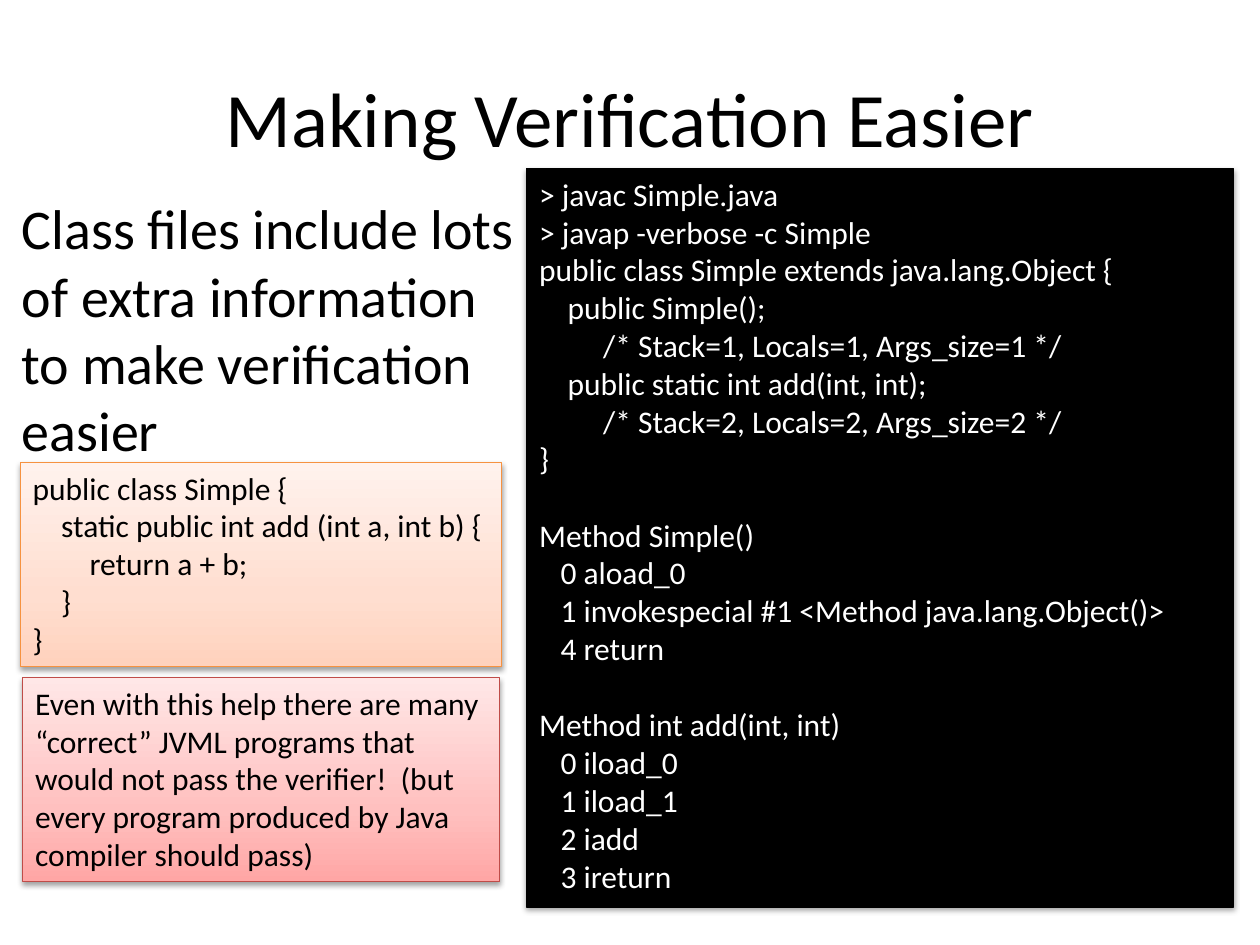
import copy

import lxml.etree
import pptx
import pptx.dml.color
import pptx.enum.shapes
import pptx.enum.text
import pptx.oxml
import pptx.oxml.ns
import pptx.util

COLOURS = {
    "text": "000000",
    "terminal": "000000",
    "terminal_text": "FFFFFF",
    "code_line": "F69240",
    "note_line": "BF4C48",
    "shadow": "000000",
}
GRADIENTS = {
    "code": [(0, "FFD2BD"), (0.35, "FFDED0"), (1, "FFF2ED")],
    "note": [(0, "FFA6A5"), (0.35, "FFC0BF"), (1, "FFE7E7")],
}
SPACE = 4.07
LINE = 22

SOURCE_CODE = [
    (0, "public class Simple {"),
    (4, "static public int add (int a, int b) {"),
    (8, "return a + b;"),
    (4, "}"),
    (0, "}"),
]
TERMINAL_BLOCKS = [
    [
        (0, "> javac Simple.java"),
        (0, "> javap -verbose -c Simple"),
        (0, "public class Simple extends java.lang.Object {"),
        (4, "public Simple();"),
        (9, "/* Stack=1, Locals=1, Args_size=1 */"),
        (4, "public static int add(int, int);"),
        (9, "/* Stack=2, Locals=2, Args_size=2 */"),
        (0, "}"),
    ],
    [
        (0, "Method Simple()"),
        (3, "0 aload_0"),
        (3, "1 invokespecial #1 <Method java.lang.Object()>"),
        (3, "4 return"),
    ],
    [
        (0, "Method int add(int, int)"),
        (3, "0 iload_0"),
        (3, "1 iload_1"),
        (3, "2 iadd"),
        (3, "3 ireturn"),
    ],
]
NOTE = (
    "Even with this help there are many “correct” JVML programs that would not "
    "pass the verifier!  (but every program produced by Java compiler should pass)"
)


def rgb(value):
    return pptx.dml.color.RGBColor.from_string(value)


class SlideBuilder:
    font = "Calibri"

    def __init__(self, slide):
        self.slide = slide

    def fill_text(self, frame, blocks, size, colour, align="LEFT", anchor="TOP"):
        frame.word_wrap = True
        frame.vertical_anchor = pptx.enum.text.MSO_ANCHOR[anchor]
        paragraph = None
        for block in blocks:
            for number, (indent, text) in enumerate(block):
                first = paragraph is None
                paragraph = frame.paragraphs[0] if first else frame.add_paragraph()
                paragraph.text = text
                paragraph.alignment = pptx.enum.text.PP_ALIGN[align]
                paragraph.font.name = self.font
                paragraph.font.size = pptx.util.Pt(size)
                paragraph.font.color.rgb = rgb(COLOURS[colour])
                if number == 0 and not first:
                    paragraph.space_before = pptx.util.Pt(LINE)
                if indent:
                    margin = pptx.util.Pt(indent * SPACE)
                    paragraph._p.get_or_add_pPr().set("marL", str(int(margin)))

    def text(self, box, text, size, indent=0, **style):
        shape = self.slide.shapes.add_textbox(*map(pptx.util.Pt, box))
        self.fill_text(shape.text_frame, [[(indent, text)]], size, "text", **style)

    def panel(self, box, blocks, line, colour="text", fill=None, gradient=None):
        shape = self.slide.shapes.add_shape(
            pptx.enum.shapes.MSO_SHAPE.RECTANGLE, *map(pptx.util.Pt, box)
        )
        if gradient:
            self.shade(shape, GRADIENTS[gradient])
        else:
            shape.fill.solid()
            shape.fill.fore_color.rgb = rgb(COLOURS[fill])
        shape.line.color.rgb = rgb(COLOURS[line])
        shape.line.width = pptx.util.Pt(0.75)
        self.shadow(shape)
        self.fill_text(shape.text_frame, blocks, 18, colour)

    def shade(self, shape, stops):
        shape.fill.gradient()
        shape.fill.gradient_angle = 90
        stop_list = shape._element.spPr.find(".//" + pptx.oxml.ns.qn("a:gsLst"))
        stop_list.append(copy.deepcopy(stop_list[-1]))
        for stop, (position, colour) in zip(shape.fill.gradient_stops, stops):
            stop.position = position
            stop.color.rgb = rgb(colour)

    def shadow(self, shape):
        shape.shadow.inherit = False
        qn = pptx.oxml.ns.qn
        effects = shape._element.spPr.find(qn("a:effectLst"))
        outer = lxml.etree.SubElement(
            effects,
            qn("a:outerShdw"),
            blurRad=str(int(pptx.util.Pt(3.1))),
            dist=str(int(pptx.util.Pt(1.7))),
            dir="5400000",
            rotWithShape="0",
        )
        colour = lxml.etree.SubElement(outer, qn("a:srgbClr"), val=COLOURS["shadow"])
        lxml.etree.SubElement(colour, qn("a:alpha"), val="37000")


def main():
    presentation = pptx.Presentation()
    presentation.slide_width = pptx.util.Pt(720)
    presentation.slide_height = pptx.util.Pt(540)
    builder = SlideBuilder(presentation.slides.add_slide(presentation.slide_layouts[6]))

    builder.text((36, 21.6, 648, 90), "Making Verification Easier", 44,
                 align="CENTER", anchor="MIDDLE")
    builder.text(
        (-21.6, 107.3, 332, 211.7),
        "Class files include lots of extra information to make verification easier",
        32, indent=6.63,
    )
    builder.panel((301, 96.3, 404, 422), TERMINAL_BLOCKS, "terminal",
                  colour="terminal_text", fill="terminal")
    builder.panel((11.6, 264.2, 275, 116.6), [SOURCE_CODE], "code_line",
                  gradient="code")
    builder.panel((13, 387.2, 272.3, 116.6), [[(0, NOTE)]], "note_line",
                  gradient="note")
    presentation.save("out.pptx")


if __name__ == "__main__":
    main()
